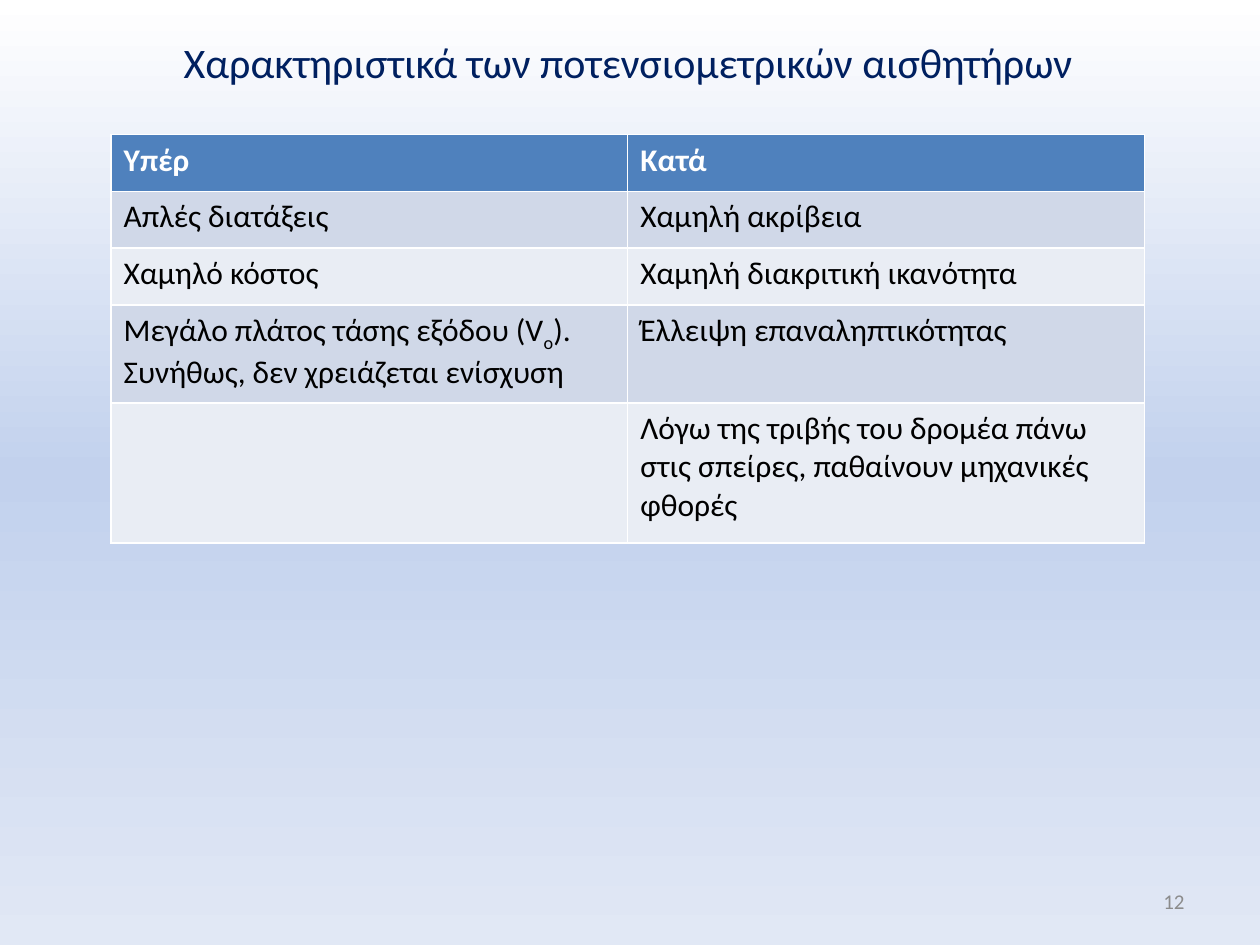
from copy import deepcopy

from pptx import Presentation
from pptx.dml.color import RGBColor
from pptx.enum.text import MSO_ANCHOR, MSO_AUTO_SIZE, PP_ALIGN
from pptx.oxml.ns import qn
from pptx.util import Pt

WHITE = RGBColor(0xFF, 0xFF, 0xFF)
BLACK = RGBColor(0x00, 0x00, 0x00)
NAVY = RGBColor(0x00, 0x20, 0x60)
GREY = RGBColor(0x8C, 0x8C, 0x8C)
HEADER = RGBColor(0x4F, 0x81, 0xBD)
BANDS = (RGBColor(0xE9, 0xED, 0xF4), RGBColor(0xD0, 0xD8, 0xE8))
BACKDROP = (WHITE, RGBColor(0xC2, 0xD1, 0xED), RGBColor(0xE1, 0xE8, 0xF5))

# A cell is a list of (text, is_subscript) runs or a plain string.
ROWS = [
    ("Υπέρ", "Κατά"),
    ("Απλές διατάξεις", "Χαμηλή ακρίβεια"),
    ("Χαμηλό κόστος", "Χαμηλή διακριτική ικανότητα"),
    ([("Μεγάλο πλάτος τάσης εξόδου (V", False), ("o", True),
      ("). Συνήθως, δεν χρειάζεται ενίσχυση", False)],
     "Έλλειψη επαναληπτικότητας"),
    ("", "Λόγω της τριβής του δρομέα πάνω στις σπείρες, "
         "παθαίνουν μηχανικές φθορές"),
]
ROW_HEIGHTS = (32.4, 32.4, 32.4, 56.2, 79.9)


class SlideBuilder:
    font = "Calibri"

    def __init__(self, slide):
        self.s = slide

    def style(self, p, size, color, bold=False, align=None):
        p.font.name, p.font.size, p.font.bold = self.font, Pt(size), bold
        p.font.color.rgb = color
        if align is not None:
            p.alignment = align

    def background(self, colors):
        """Fill the background with evenly spaced colours, top to bottom."""
        fill = self.s.background.fill
        fill.gradient()
        fill.gradient_angle = 270
        stops = self.s.element.find(".//" + qn("a:gsLst"))
        while len(stops) < len(colors):
            stops.append(deepcopy(stops[0]))
        for i, (stop, color) in enumerate(zip(fill.gradient_stops, colors)):
            stop.position = i / (len(colors) - 1)
            stop.color.rgb = color

    def place(self, sp, left, top, width, height):
        sp.left, sp.top = Pt(left), Pt(top)
        sp.width, sp.height = Pt(width), Pt(height)

    def title(self, text, *box):
        sp = self.s.shapes.title
        self.place(sp, *box)
        tf = sp.text_frame
        tf.text = text
        tf.vertical_anchor = MSO_ANCHOR.MIDDLE
        tf.auto_size = MSO_AUTO_SIZE.SHAPE_TO_FIT_TEXT
        self.style(tf.paragraphs[0], 24, NAVY, align=PP_ALIGN.CENTER)

    def table(self, rows, heights, left, top, width):
        frame = self.s.shapes.add_table(
            len(rows), len(rows[0]), Pt(left), Pt(top), Pt(width),
            Pt(sum(heights)))
        for i, (row, height) in enumerate(zip(rows, heights)):
            frame.table.rows[i].height = Pt(height)
            for j, content in enumerate(row):
                self.cell(frame.table.cell(i, j), content, i)

    def cell(self, cell, content, row):
        is_header = row == 0
        cell.fill.solid()
        cell.fill.fore_color.rgb = HEADER if is_header else BANDS[row % 2]
        p = cell.text_frame.paragraphs[0]
        self.style(p, 18, WHITE if is_header else BLACK, bold=is_header)
        runs = [(content, False)] if isinstance(content, str) else content
        for text, is_subscript in runs:
            if text:
                r = p.add_run()
                r.text = text
                if is_subscript:
                    r.font._element.set("baseline", "-25000")

    def page_number(self, text, *box):
        tf = self.s.shapes.add_textbox(*map(Pt, box)).text_frame
        tf.word_wrap = True
        tf.vertical_anchor = MSO_ANCHOR.MIDDLE
        tf.text = text
        self.style(tf.paragraphs[0], 12, GREY, align=PP_ALIGN.RIGHT)


def main():
    prs = Presentation()
    prs.slide_width, prs.slide_height = Pt(720), Pt(540)
    title_only = prs.slide_layouts[5]
    builder = SlideBuilder(prs.slides.add_slide(title_only))
    builder.background(BACKDROP)
    builder.title("Χαρακτηριστικά των ποτενσιομετρικών αισθητήρων",
                  22.3, 17.3, 673.2, 36)
    builder.table(ROWS, ROW_HEIGHTS, 63.5, 77, 590.4)
    builder.page_number("12", 516, 500.5, 168, 28.8)
    prs.save("out.pptx")


if __name__ == "__main__":
    main()
